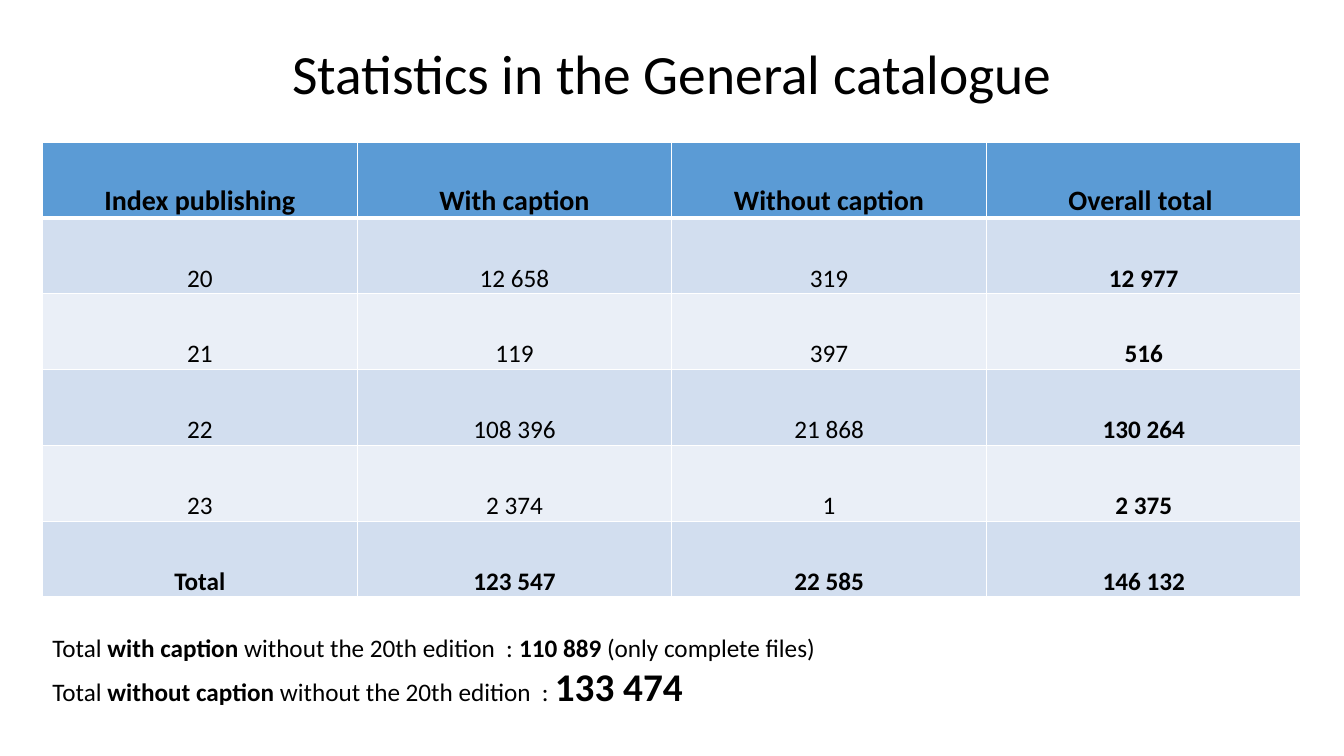
from dataclasses import dataclass

import pptx
import pptx.dml.color
import pptx.enum.text
import pptx.oxml
import pptx.oxml.ns
import pptx.util
from pptx.util import Pt


@dataclass(frozen=True)
class Theme:
    font: str = "Calibri"
    text: str = "000000"
    border: str = "FFFFFF"
    header_fill: str = "5B9BD5"
    band_fills: tuple = ("D2DEEF", "EAEFF7")
    title_size: float = 39.6
    header_size: float = 20
    body_size: float = 18
    highlight_size: float = 28


THEME = Theme()
CENTER = pptx.enum.text.PP_ALIGN.CENTER

STATISTICS = [
    ["Index publishing", "With caption", "Without caption", "Overall total "],
    ["20", "12 658", "319", "12 977"],
    ["21", "119", "397", "516"],
    ["22", "108 396", "21 868", "130 264"],
    ["23", "2 374", "1", "2 375"],
    ["Total", "123 547", "22 585", "146 132"],
]

# Each run: text, bold, size
SUMMARY = [
    [
        ("Total ", False, THEME.body_size),
        ("with caption ", True, THEME.body_size),
        ("without the 20th edition  : ", False, THEME.body_size),
        ("110 889 ", True, THEME.body_size),
        ("(only complete files)", False, THEME.body_size),
    ],
    [
        ("Total ", False, THEME.body_size),
        ("without caption ", True, THEME.body_size),
        ("without the 20th edition  : ", False, THEME.body_size),
        ("133 474", True, THEME.highlight_size),
    ],
]


def set_font(font, size, bold=False):
    font.name = THEME.font
    font.size = Pt(size)
    font.bold = bold
    font.color.rgb = pptx.dml.color.RGBColor.from_string(THEME.text)


def add_title(slide, text):
    title = slide.shapes.title
    title.left, title.top, title.width, title.height = Pt(66), Pt(29), Pt(828), Pt(51)
    frame = title.text_frame
    frame.text = text
    frame.vertical_anchor = pptx.enum.text.MSO_ANCHOR.MIDDLE
    frame.auto_size = pptx.enum.text.MSO_AUTO_SIZE.NONE
    paragraph = frame.paragraphs[0]
    paragraph.alignment = CENTER
    paragraph.line_spacing = 0.9
    set_font(paragraph.font, THEME.title_size)


def set_borders(cell, top, bottom):
    """Draw the cell borders; top and bottom are widths in points."""
    properties = cell._tc.get_or_add_tcPr()
    for side, width in (("L", 1), ("R", 1), ("T", top), ("B", bottom)):
        properties.append(pptx.oxml.parse_xml(
            f'<a:ln{side} {pptx.oxml.ns.nsdecls("a")} w="{Pt(width)}"><a:solidFill>'
            f'<a:srgbClr val="{THEME.border}"/></a:solidFill></a:ln{side}>'
        ))


def format_cell(cell, text, fill, size, bold):
    cell.fill.solid()
    cell.fill.fore_color.rgb = pptx.dml.color.RGBColor.from_string(fill)
    cell.vertical_anchor = pptx.enum.text.MSO_ANCHOR.BOTTOM
    cell.margin_left = cell.margin_right = Pt(3.6)
    cell.margin_top = cell.margin_bottom = Pt(0)
    cell.text = text
    paragraph = cell.text_frame.paragraphs[0]
    paragraph.alignment = CENTER
    paragraph.line_spacing = 1.15
    set_font(paragraph.font, size, bold)


def add_statistics_table(slide, rows):
    last_row, last_column = len(rows) - 1, len(rows[0]) - 1
    table = slide.shapes.add_table(
        len(rows), len(rows[0]), Pt(30.4), Pt(101.6), Pt(899), Pt(324.9)
    ).table
    for row_index, row in enumerate(rows):
        header = row_index == 0
        fill = THEME.header_fill if header else THEME.band_fills[(row_index - 1) % 2]
        size = THEME.header_size if header else THEME.body_size
        for column_index, text in enumerate(row):
            cell = table.cell(row_index, column_index)
            bold = row_index in (0, last_row) or column_index == last_column
            set_borders(cell, top=3 if row_index == 1 else 1, bottom=3 if header else 1)
            format_cell(cell, text, fill, size, bold)


def add_summary(slide, lines):
    frame = slide.shapes.add_textbox(Pt(30.4), Pt(448), Pt(632), Pt(63.4)).text_frame
    frame.word_wrap = True
    frame.auto_size = pptx.enum.text.MSO_AUTO_SIZE.SHAPE_TO_FIT_TEXT
    for index, line in enumerate(lines):
        paragraph = frame.add_paragraph() if index else frame.paragraphs[0]
        for text, bold, size in line:
            run = paragraph.add_run()
            run.text = text
            set_font(run.font, size, bold)


def main():
    presentation = pptx.Presentation()
    presentation.slide_width, presentation.slide_height = Pt(960), Pt(540)
    title_only = presentation.slide_layouts[5]
    slide = presentation.slides.add_slide(title_only)
    add_title(slide, "Statistics in the General catalogue")
    add_statistics_table(slide, STATISTICS)
    add_summary(slide, SUMMARY)
    presentation.save("out.pptx")


if __name__ == "__main__":
    main()
